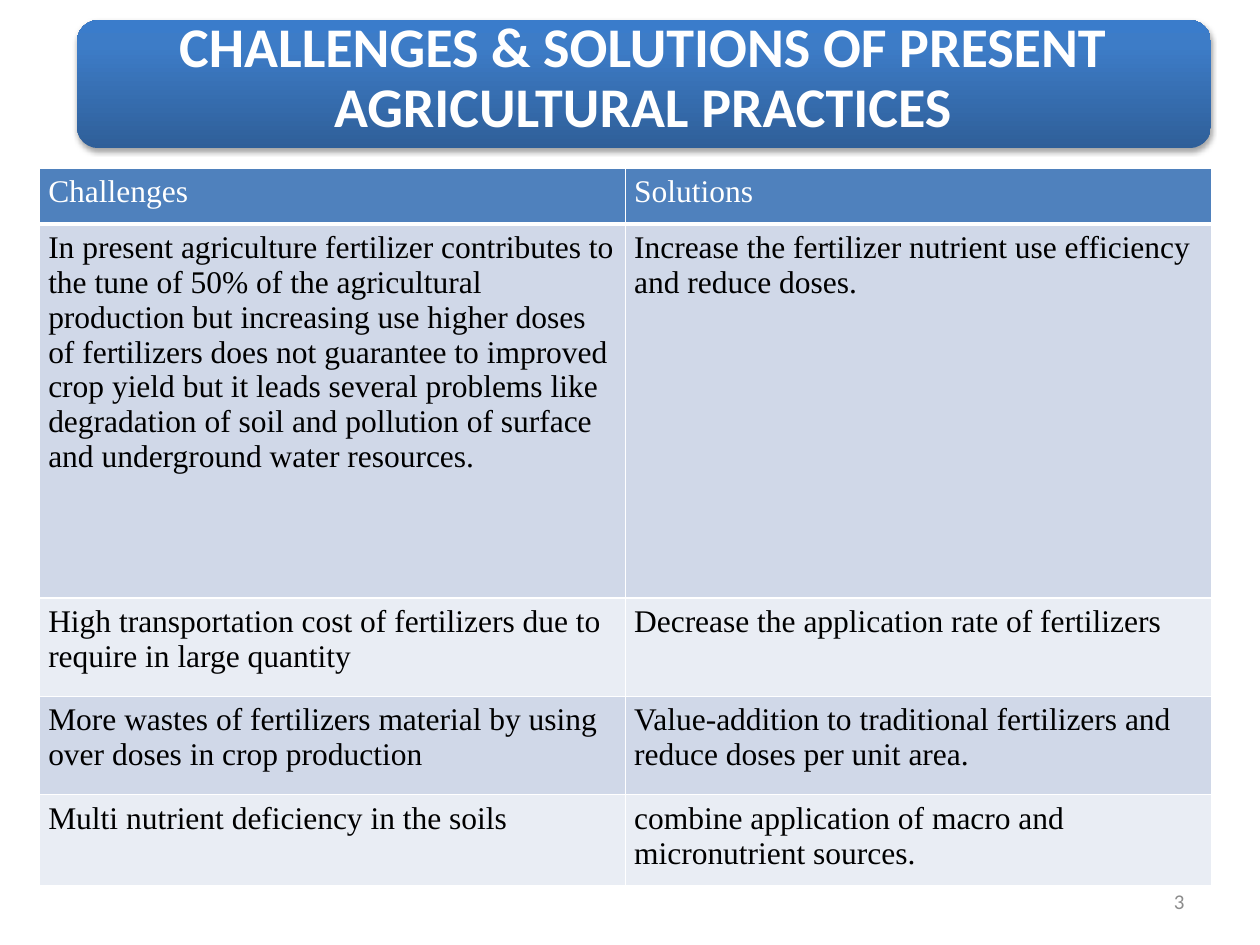
from lxml.etree import SubElement
from pptx import Presentation
from pptx.dml.color import RGBColor
from pptx.enum.shapes import MSO_SHAPE as Preset
from pptx.enum.text import MSO_ANCHOR as Anchor, PP_ALIGN as Align
from pptx.oxml import parse_xml
from pptx.oxml.ns import nsdecls, qn
from pptx.util import Pt

HEADER = ("Challenges", "Solutions")
PAIRS = [
    ("In present agriculture fertilizer contributes to the tune of 50% of the "
     "agricultural production but increasing use higher doses of fertilizers does "
     "not guarantee to improved crop yield but it leads several problems like "
     "degradation of soil and pollution of surface and underground water resources.",
     "Increase the fertilizer nutrient use efficiency and reduce doses."),
    ("High transportation cost of fertilizers due to require in large quantity",
     "Decrease the application rate of fertilizers"),
    ("More wastes of fertilizers material by using over doses in crop production",
     "Value-addition to traditional fertilizers and reduce doses per unit area."),
    ("Multi nutrient deficiency in the soils",
     "combine application of macro and micronutrient sources."),
]
ROW_HEIGHTS = (32, 213.8, 56.2, 56.2, 52.2)


def color(code):
    return RGBColor.from_string(code)


class SlideBuilder:
    heading_font = "Calibri"
    body_font = "Times New Roman"
    white, black, grey = "FFFFFF", "000000", "8C8C8C"
    header_fill = "4F81BD"
    bands = ("D0D8E8", "E9EDF4")
    banner_stops = ((0, "2F5F99"), (80, "3D7CC7"), (100, "3A7CCB"))

    def __init__(self, deck):
        self.page = deck.slides.add_slide(deck.slide_layouts[6])

    def add_text(self, frame, text, font, size, ink, bold=False, align=Align.LEFT):
        para = frame.paragraphs[0]
        para.alignment = align
        span = para.add_run()
        span.text = text
        span.font.name, span.font.size, span.font.bold = font, Pt(size), bold
        span.font.color.rgb = color(ink)
        return para

    def text_box(self, shapes, area, inset):
        box = shapes.add_textbox(*map(Pt, area))
        frame = box.text_frame
        frame.word_wrap = True
        frame.vertical_anchor = Anchor.MIDDLE
        frame.margin_left = frame.margin_right = Pt(inset[0])
        frame.margin_top = frame.margin_bottom = Pt(inset[1])
        return frame

    def banner(self, text):
        group = self.page.shapes.add_group_shape()
        plate = group.shapes.add_shape(
            Preset.ROUNDED_RECTANGLE, Pt(44), Pt(11.5), Pt(648), Pt(73.2))
        plate.line.fill.background()
        plate.fill.gradient()
        gradient = plate._element.spPr.find(qn("a:gradFill"))
        stops = "".join(
            f'<a:gs pos="{place * 1000}"><a:srgbClr val="{code}"/></a:gs>'
            for place, code in self.banner_stops)
        gradient.getparent().replace(gradient, parse_xml(
            f'<a:gradFill {nsdecls("a")} rotWithShape="1"><a:gsLst>{stops}</a:gsLst>'
            '<a:lin ang="16200000" scaled="0"/></a:gradFill>'))
        plate.shadow.inherit = False
        effects = plate._element.spPr.find(qn("a:effectLst"))
        effects.append(parse_xml(
            f'<a:outerShdw {nsdecls("a")} blurRad="{Pt(3.1)}" dist="{Pt(1.8)}" '
            'dir="5400000" rotWithShape="0"><a:srgbClr val="000000">'
            '<a:alpha val="35000"/></a:srgbClr></a:outerShdw>'))
        frame = self.text_box(group.shapes, (47.5, 15, 640, 60.5), (13, 13))
        para = self.add_text(frame, text, self.heading_font, 32, self.white,
                             bold=True, align=Align.CENTER)
        para.line_spacing = 0.9

    def cell(self, cell, text, fill, ink, bottom):
        cell.margin_left = cell.margin_right = Pt(5)
        cell.margin_top = cell.margin_bottom = Pt(3.6)
        self.add_text(cell.text_frame, text, self.body_font, 18, ink)
        properties = cell._tc.get_or_add_tcPr()
        for side, width in (("L", 1), ("R", 1), ("T", 1), ("B", bottom)):
            edge = SubElement(properties, qn(f"a:ln{side}"), w=str(Pt(width)))
            paint = SubElement(edge, qn("a:solidFill"))
            SubElement(paint, qn("a:srgbClr"), val=self.white)
        cell.fill.solid()
        cell.fill.fore_color.rgb = color(fill)

    def table(self, header, rows, heights):
        grid = self.page.shapes.add_table(
            len(heights), len(header), Pt(22.6), Pt(96), Pt(669.6), Pt(sum(heights))).table
        for index, (texts, height) in enumerate(zip([header, *rows], heights)):
            grid.rows[index].height = Pt(height)
            if index == 0:
                look = self.header_fill, self.white, 3
            else:
                look = self.bands[(index - 1) % 2], self.black, 1
            for column, text in enumerate(texts):
                self.cell(grid.cell(index, column), text, *look)

    def page_number(self, text):
        frame = self.text_box(self.page.shapes, (516, 500.5, 168, 28.8), (7.2, 3.6))
        self.add_text(frame, text, self.heading_font, 12, self.grey, align=Align.RIGHT)


def main():
    deck = Presentation()
    deck.slide_width, deck.slide_height = Pt(720), Pt(540)
    slide = SlideBuilder(deck)
    slide.page_number("3")
    slide.table(HEADER, PAIRS, ROW_HEIGHTS)
    slide.banner("CHALLENGES & SOLUTIONS OF PRESENT AGRICULTURAL PRACTICES")
    deck.save("out.pptx")


if __name__ == "__main__":
    main()
